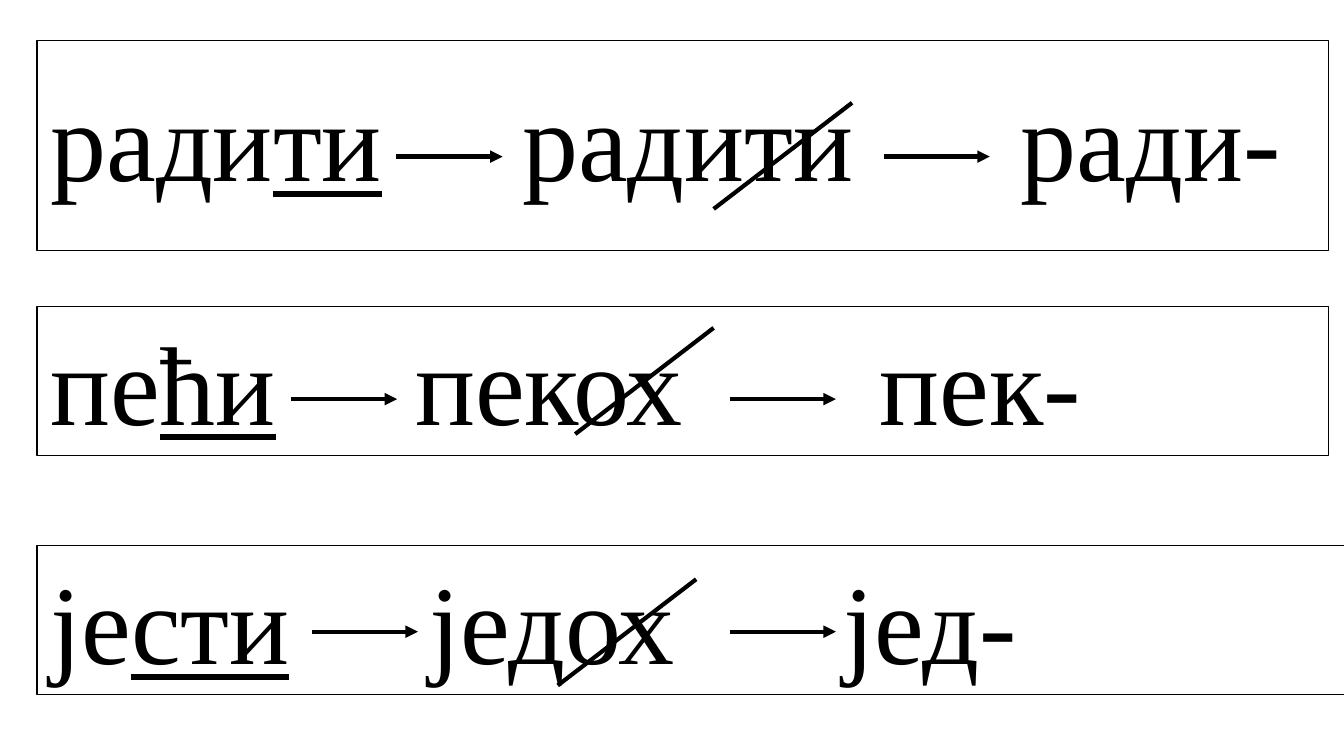
from lxml import etree
from pptx import Presentation, util as u
from pptx.dml.color import RGBColor
from pptx.enum import shapes, text
from pptx.oxml import ns

COLORS = {"ink": "000000", "paper": "FFFFFF"}
FONT = "Times New Roman"
COLUMNS, ROWS = 100, 56.25
ARROW_LENGTH = 7.9
STRIKE_WIDTH, STRIKE_HEIGHT = 10.3, 7.9


def color(name):
    return RGBColor.from_string(COLORS[name])


class StemSlide:
    """Black-on-white word chains, placed in columns and rows of a fine grid."""

    def __init__(self, deck):
        self.column = deck.slide_width / COLUMNS
        self.row = deck.slide_height / ROWS
        self.page = deck.slides.add_slide(deck.slide_layouts[5])
        fill = self.page.background.fill
        fill.solid()
        fill.fore_color.rgb = color("paper")

    def x(self, columns):
        return u.Emu(round(columns * self.column))

    def y(self, rows):
        return u.Emu(round(rows * self.row))

    def title(self, area, *words):
        box = self.page.shapes.title
        box.left, box.top = self.x(area[0]), self.y(area[1])
        box.width, box.height = self.x(area[2]), self.y(area[3])
        self.fill_box(box, text.MSO_ANCHOR.MIDDLE, text.MSO_AUTO_SIZE.NONE, *words)
        box.text_frame.paragraphs[0].line_spacing = 0.9

    def word_box(self, area, *words):
        left, top, width, height = area
        box = self.page.shapes.add_textbox(
            self.x(left), self.y(top), self.x(width), self.y(height))
        self.fill_box(box, text.MSO_ANCHOR.TOP,
                      text.MSO_AUTO_SIZE.SHAPE_TO_FIT_TEXT, *words)

    def fill_box(self, box, anchor, auto_size, stem, ending, forms, stops):
        """Write the infinitive with its ending underlined, then the tabbed forms."""
        box.line.color.rgb = color("ink")
        box.line.width = u.Pt(0.75)
        frame = box.text_frame
        frame.word_wrap = True
        frame.auto_size = auto_size
        frame.vertical_anchor = anchor
        para = frame.paragraphs[0]
        para.alignment = text.PP_ALIGN.LEFT
        self.tab_stops(para, stops)
        tabbed = "".join("\t" + form for form in forms)
        for words, underlined in ((stem, False), (ending, True), (tabbed, False)):
            span = para.add_run()
            span.text = words
            span.font.name = FONT
            span.font.size = u.Pt(60)
            span.font.color.rgb = color("ink")
            span.font.underline = underlined

    def tab_stops(self, para, stops):
        tabs = etree.SubElement(para._p.get_or_add_pPr(), ns.qn("a:tabLst"))
        for stop in stops:
            etree.SubElement(tabs, ns.qn("a:tab"), pos=str(self.x(stop)), algn="l")

    def line(self, x1, y1, x2, y2):
        line = self.page.shapes.add_connector(
            shapes.MSO_CONNECTOR.STRAIGHT,
            self.x(x1), self.y(y1), self.x(x2), self.y(y2))
        line.line.color.rgb = color("ink")
        line.line.width = u.Pt(2.25)
        etree.SubElement(line._element.spPr, ns.qn("a:effectLst"))
        return line

    def arrow(self, left, level):
        arrow = self.line(left, level, left + ARROW_LENGTH, level)
        etree.SubElement(arrow.line._get_or_add_ln(), ns.qn("a:tailEnd"),
                         type="triangle")

    def strike(self, right, top):
        """Cross out an ending from upper right to lower left."""
        self.line(right, top, right - STRIKE_WIDTH, top + STRIKE_HEIGHT)


def main():
    deck = Presentation()
    deck.slide_width = u.Inches(10)
    deck.slide_height = u.Emu(deck.slide_width * 9 // 16)
    slide = StemSlide(deck)

    slide.title((2.75, 3, 96.1, 15.65),
                "ради", "ти", ("радити", "ради-"), (35.1, 72.2))
    slide.word_box((2.75, 22.8, 96.1, 11.1),
                   "пе", "ћи", ("пекох", "пек-"), (27.15, 61.7))
    slide.word_box((2.75, 40.6, 98, 11.1),
                   "је", "сти", ("једох", "јед-"), (28.2, 59))

    for level, arrows, strike in (
        (11.65, (29.5, 65.75), (63.4, 7.65)),
        (29.7, (21.65, 54.3), (53.1, 24.4)),
        (47, (23.2, 54.3), (51.8, 43.1)),
    ):
        for left in arrows:
            slide.arrow(left, level)
        slide.strike(*strike)

    deck.save("out.pptx")


if __name__ == "__main__":
    main()
